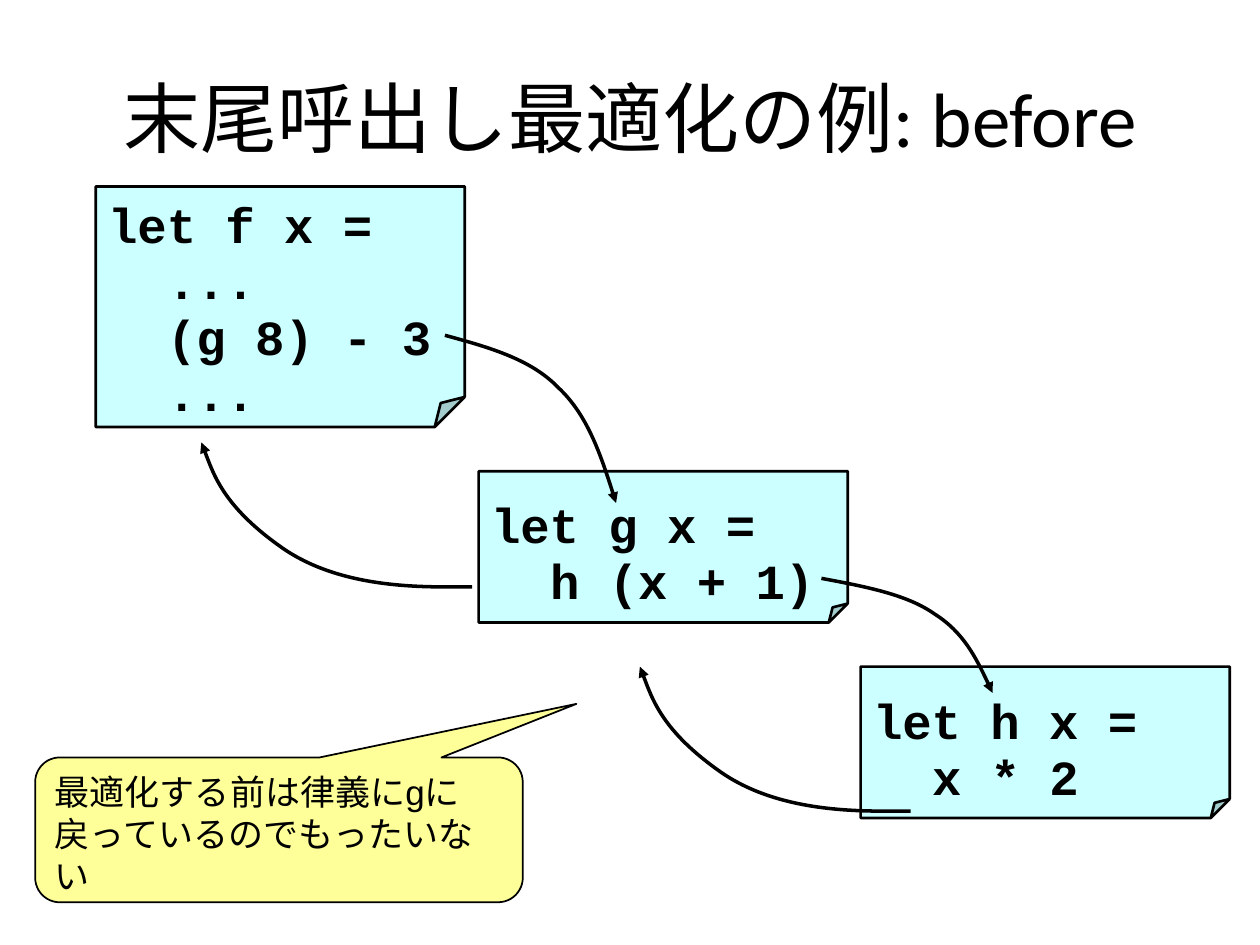
from lxml import etree
from pptx import Presentation
from pptx import util as u
from pptx.dml.color import RGBColor
from pptx.enum import shapes, text
from pptx.oxml.ns import qn

CALL = [(0, 0), (0.25, 0.07), (0.5, 0.14), (0.66, 0.31), (0.83, 0.47), (0.92, 0.74), (1, 1)]
RETURN = [(1, 0.97), (0.85, 0.97), (0.53, 1), (0.3, 0.71), (0.08, 0.43), (0.03, 0.14), (0, 0)]


def rgb(value):
    return RGBColor.from_string(value)


def style(sp, fill, width):
    sp.shadow.inherit = False
    if fill:
        sp.fill.solid()
        sp.fill.fore_color.rgb = rgb(fill)
    else:
        sp.fill.background()
    sp.line.color.rgb = rgb("000000")
    sp.line.width = u.Pt(width)


def set_font(p, name, size, bold=False):
    p.font.name = name
    p.font.size = u.Pt(size)
    p.font.bold = bold
    p.font.color.rgb = rgb("000000")


def add_title(s, box, label):
    sp = s.shapes.title
    sp.left, sp.top, sp.width, sp.height = map(u.Cm, box)
    tf = sp.text_frame
    tf.text = label
    tf.vertical_anchor = text.MSO_ANCHOR.MIDDLE
    p = tf.paragraphs[0]
    p.alignment = text.PP_ALIGN.CENTER
    set_font(p, "Calibri", 44)


def add_code(s, box, top_margin, lines):
    sp = s.shapes.add_shape(shapes.MSO_SHAPE.FOLDED_CORNER, *map(u.Cm, box))
    guides = next(sp._element.iter(qn("a:avLst")))
    for guide in list(guides):
        guides.remove(guide)
    etree.SubElement(guides, qn("a:gd"), name="adj", fmla="val 12500")
    style(sp, "CCFFFF", 1.5)
    tf = sp.text_frame
    tf.word_wrap = False
    tf.vertical_anchor = text.MSO_ANCHOR.TOP
    tf.margin_top = u.Cm(top_margin)
    for i, line in enumerate(lines):
        p = tf.add_paragraph() if i else tf.paragraphs[0]
        p.text = line
        p.alignment = text.PP_ALIGN.LEFT
        p.line_spacing = 0.95
        set_font(p, "Courier New", 28, True)
        if i:
            pPr = p._p.get_or_add_pPr()
            pPr.set("marL", str(u.Cm(1.19)))
            pPr.set("indent", "0")


def add_curve(s, box, points):
    x, y, w, h = box
    start, *rest = [(u.Cm(x + w * fx), u.Cm(y + h * fy)) for fx, fy in points]
    fb = s.shapes.build_freeform(*start)
    fb.add_line_segments(rest, close=False)
    sp = fb.convert_to_shape()
    style(sp, None, 2)
    path = next(sp._element.iter(qn("a:path")))
    segments = path.findall(qn("a:lnTo"))
    for i in range(0, len(segments), 3):
        curve = etree.SubElement(path, qn("a:cubicBezTo"))
        for segment in segments[i:i + 3]:
            curve.append(segment[0])
            path.remove(segment)
    ln = next(sp._element.iter(qn("a:ln")))
    etree.SubElement(ln, qn("a:tailEnd"), type="triangle")


def add_callout(s, box, label):
    sp = s.shapes.add_shape(shapes.MSO_SHAPE.ROUNDED_RECTANGULAR_CALLOUT, *map(u.Cm, box))
    for i, value in enumerate((0.61, -0.87, 0.17)):
        sp.adjustments[i] = value
    style(sp, "FFFF99", 1)
    tf = sp.text_frame
    tf.word_wrap = True
    tf.vertical_anchor = text.MSO_ANCHOR.TOP
    tf.text = label
    p = tf.paragraphs[0]
    p.alignment = text.PP_ALIGN.LEFT
    set_font(p, "Arial", 20)


def main():
    prs = Presentation()
    prs.slide_width, prs.slide_height = u.Cm(25.4), u.Cm(19.05)
    s = prs.slides.add_slide(prs.slide_layouts[5])
    add_title(s, (1.27, 0.76, 22.86, 3.18), "末尾呼出し最適化の例: before")
    add_code(s, (1.93, 3.76, 7.44, 4.85), 0.25, ["let f x =", "...", "(g 8) - 3", "..."])
    add_code(s, (9.65, 9.5, 7.44, 3.05), 0.56, ["let g x =", "h (x + 1)"])
    add_code(s, (17.35, 13.44, 7.44, 3.05), 0.56, ["let h x =", "x * 2"])
    add_curve(s, (8.97, 6.76, 3.45, 3.38), CALL)
    add_curve(s, (16.56, 11.66, 3.45, 2.31), CALL)
    add_curve(s, (12.9, 13.44, 5.46, 3), RETURN)
    add_callout(s, (0.71, 15.27, 9.83, 2.92), "最適化する前は律義にgに戻っているのでもったいない")
    add_curve(s, (4.06, 8.92, 5.46, 3), RETURN)
    prs.save("out.pptx")


if __name__ == "__main__":
    main()
